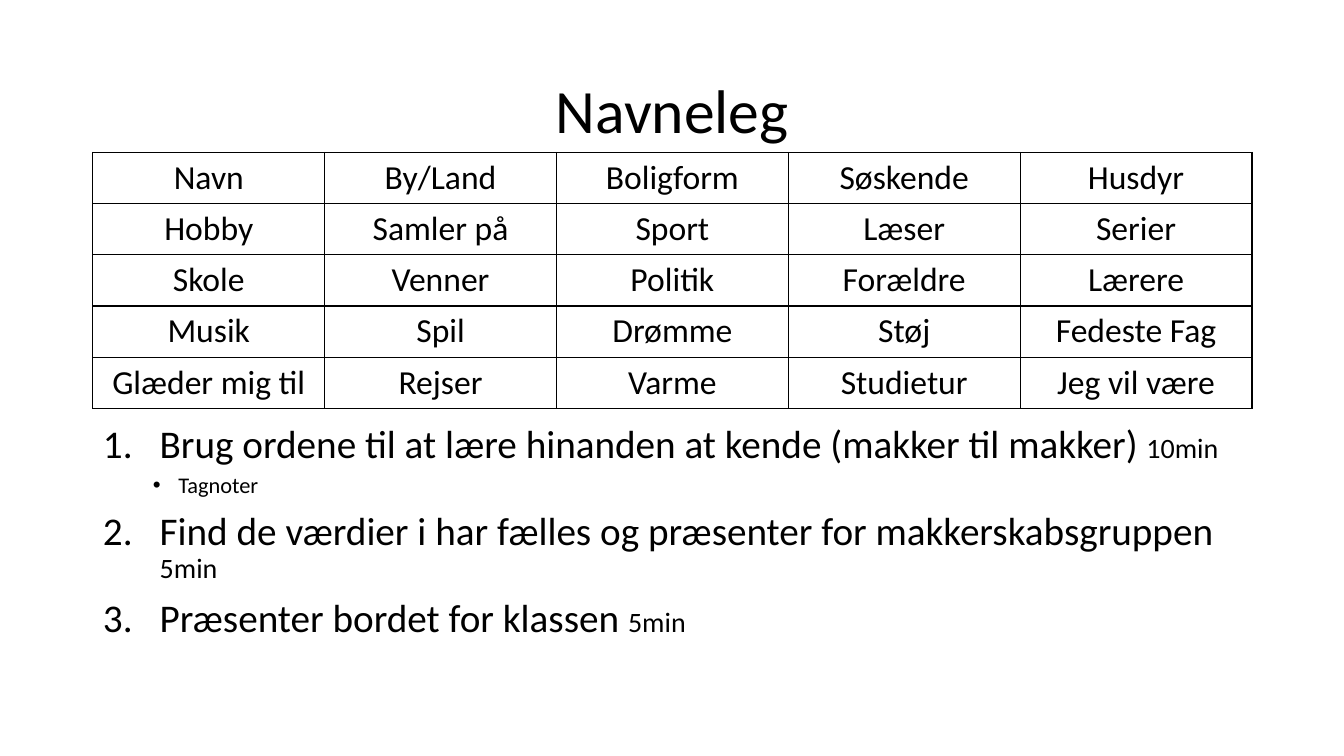
import dataclasses
import typing

import lxml.etree
import pptx
import pptx.dml.color
import pptx.enum.text
import pptx.oxml.ns
import pptx.util

Cm = pptx.util.Cm
Pt = pptx.util.Pt
qn = pptx.oxml.ns.qn

BLACK = pptx.dml.color.RGBColor(0, 0, 0)
WHITE = pptx.dml.color.RGBColor(255, 255, 255)
FONT = "Calibri"
LEFT, WIDTH = Cm(2.34), Cm(29.21)
ROW_HEIGHT = Cm(1.29)
CENTER = pptx.enum.text.PP_ALIGN.CENTER
MIDDLE = pptx.enum.text.MSO_ANCHOR.MIDDLE
TOP = pptx.enum.text.MSO_ANCHOR.TOP

TOPICS = [
    ["Navn", "By/Land", "Boligform", "Søskende", "Husdyr"],
    ["Hobby", "Samler på", "Sport", "Læser", "Serier"],
    ["Skole", "Venner", "Politik", "Forældre", "Lærere"],
    ["Musik", "Spil", "Drømme", "Støj", "Fedeste Fag"],
    ["Glæder mig til", "Rejser", "Varme", "Studietur", "Jeg vil være"],
]


@dataclasses.dataclass(frozen=True)
class ListStyle:
    level: int
    size: int
    margin: float
    indent: float
    space_before: int
    bullet: tuple[str, dict[str, str]]


@dataclasses.dataclass(frozen=True)
class Item:
    style: ListStyle
    text: str
    duration: str = ""


STEP = ListStyle(0, 28, 1.43, -1.43, 10, ("a:buAutoNum", {"type": "arabicPeriod"}))
NOTE = ListStyle(1, 16, 1.9, -0.64, 5, ("a:buChar", {"char": "•"}))

ITEMS = [
    Item(STEP, "Brug ordene til at lære hinanden at kende (makker til makker) ", "10min"),
    Item(NOTE, "Tagnoter"),
    Item(STEP, "Find de værdier i har fælles og præsenter for makkerskabsgruppen ", "5min"),
    Item(STEP, "Præsenter bordet for klassen ", "5min"),
]


def apply(obj: typing.Any, values: dict[str, typing.Any]) -> None:
    for name, value in values.items():
        setattr(obj, name, value)


def add_run(p: typing.Any, text: str, size: int) -> None:
    r = p.add_run()
    r.text = text
    apply(r.font, {"name": FONT, "size": Pt(size), "bold": False})
    r.font.color.rgb = BLACK


def place(sp: typing.Any, top: float, height: float, anchor: typing.Any) -> typing.Any:
    apply(sp, {"left": LEFT, "top": Cm(top), "width": WIDTH, "height": Cm(height)})
    tf = sp.text_frame
    apply(tf, {
        "word_wrap": True,
        "auto_size": pptx.enum.text.MSO_AUTO_SIZE.NONE,
        "vertical_anchor": anchor,
    })
    return tf


def add_item(p: typing.Any, item: Item) -> None:
    style = item.style
    apply(p, {
        "level": style.level,
        "line_spacing": 0.9,
        "space_before": Pt(style.space_before),
    })
    pPr = p._p.get_or_add_pPr()
    pPr.set("marL", str(Cm(style.margin)))
    pPr.set("indent", str(Cm(style.indent)))
    tag, attributes = style.bullet
    bullet_font = "Arial" if tag == "a:buChar" else "+mj-lt"
    lxml.etree.SubElement(pPr, qn("a:buFont"), typeface=bullet_font)
    lxml.etree.SubElement(pPr, qn(tag), attributes)
    add_run(p, item.text, style.size)
    if item.duration:
        add_run(p, item.duration, 20)


def fill_cell(cell: typing.Any, text: str) -> None:
    tcPr = cell._tc.get_or_add_tcPr()
    for side in ("a:lnL", "a:lnR", "a:lnT", "a:lnB"):
        ln = lxml.etree.SubElement(tcPr, qn(side), w=str(Pt(1)))
        fill = lxml.etree.SubElement(ln, qn("a:solidFill"))
        lxml.etree.SubElement(fill, qn("a:srgbClr"), val=str(BLACK))
    cell.fill.solid()
    cell.fill.fore_color.rgb = WHITE
    p = cell.text_frame.paragraphs[0]
    p.alignment = CENTER
    add_run(p, text, 24)


def add_topics(slide: typing.Any) -> None:
    rows, cols = len(TOPICS), len(TOPICS[0])
    table = slide.shapes.add_table(
        rows, cols, LEFT, Cm(3.84), WIDTH, ROW_HEIGHT * rows
    ).table
    apply(table, {"first_row": False, "horz_banding": False})
    for i, row in enumerate(TOPICS):
        for j, text in enumerate(row):
            fill_cell(table.cell(i, j), text)


def main() -> None:
    prs = pptx.Presentation()
    apply(prs, {"slide_width": Cm(33.87), "slide_height": Cm(19.05)})
    slide = prs.slides.add_slide(prs.slide_layouts[1])

    tf = place(slide.shapes.title, 1.02, 3.68, MIDDLE)
    p = tf.paragraphs[0]
    apply(p, {"alignment": CENTER, "line_spacing": 0.9})
    add_run(p, "Navneleg", 44)

    tf = place(slide.placeholders[1], 10.57, 6.71, TOP)
    for i, item in enumerate(ITEMS):
        add_item(tf.add_paragraph() if i else tf.paragraphs[0], item)

    add_topics(slide)
    prs.save("out.pptx")


if __name__ == "__main__":
    main()
